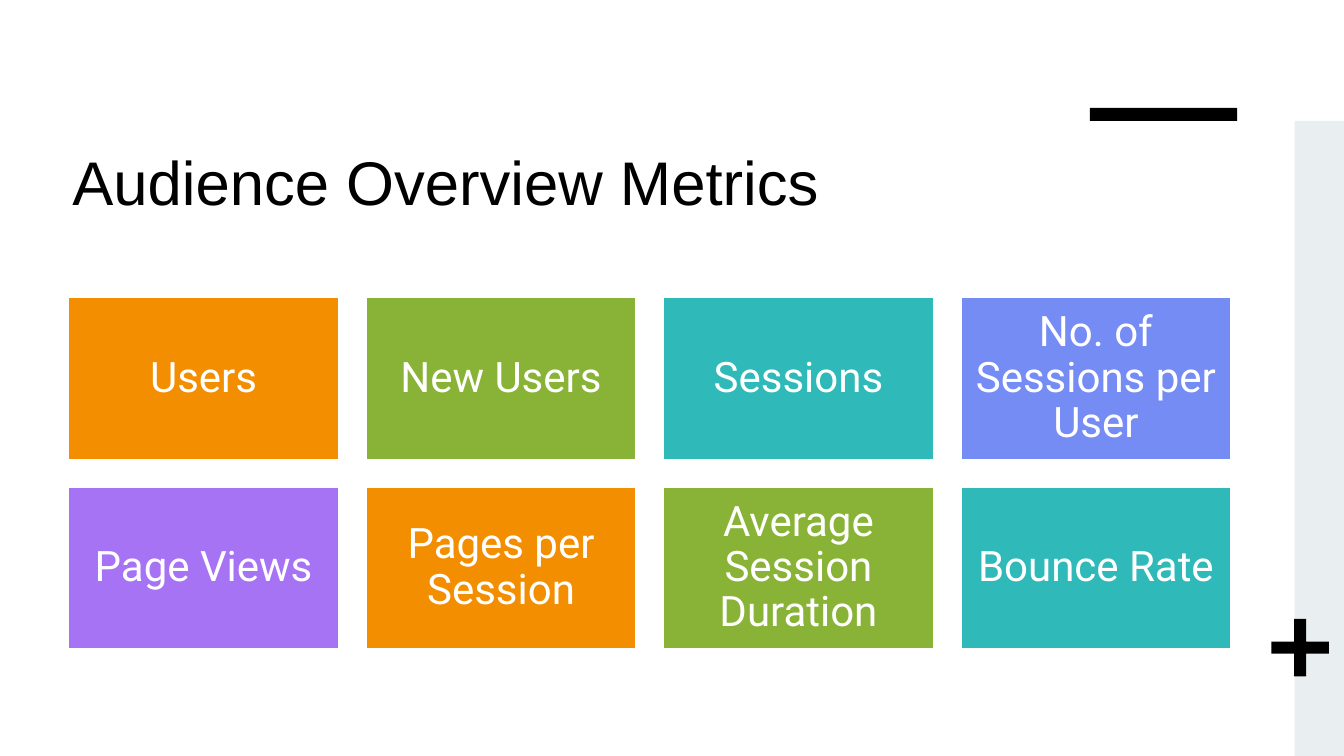
"""Build the Audience Overview Metrics slide."""
from dataclasses import dataclass

from pptx import Presentation
from pptx.dml.color import RGBColor
from pptx.enum.shapes import MSO_SHAPE as SHAPE
from pptx.enum.text import MSO_ANCHOR as ANCHOR, PP_ALIGN as ALIGN
from pptx.shapes.autoshape import Shape
from pptx.slide import Slide
from pptx.text.text import TextFrame
from pptx.util import Inches, Pt

WHITE, BLACK, PALE = "FFFFFF", "000000", "E9EFF1"
COLUMNS = 4
CARD_LEFT, CARD_TOP = 0.68, 2.95
CARD_W, CARD_H, GAP = 2.68, 1.61, 0.27


@dataclass
class Block:
    left: float
    top: float
    width: float
    height: float
    fill: str
    kind: SHAPE = SHAPE.RECTANGLE


@dataclass
class Metric:
    label: str
    fill: str


METRICS = [
    Metric("Users", "F38E00"),
    Metric("New Users", "89B336"),
    Metric("Sessions", "30B9B9"),
    Metric("No. of Sessions per User", "748CF4"),
    Metric("Page Views", "A673F4"),
    Metric("Pages per Session", "F38E00"),
    Metric("Average Session Duration", "89B336"),
    Metric("Bounce Rate", "30B9B9"),
]


def color(value: str) -> RGBColor:
    """Turn a hex string into a colour."""
    return RGBColor.from_string(value)


def set_text(tf: TextFrame, text: str, font: str, size: int, fill: str) -> None:
    """Fill a text frame with one wrapped, formatted line of text."""
    tf.text = text
    tf.word_wrap = True
    r = tf.paragraphs[0].runs[0]
    r.font.name = font
    r.font.size = Pt(size)
    r.font.color.rgb = color(fill)


def add_block(s: Slide, block: Block) -> Shape:
    """Draw a flat shape without outline or shadow."""
    box = (block.left, block.top, block.width, block.height)
    sp = s.shapes.add_shape(block.kind, *map(Inches, box))
    sp.shadow.inherit = False
    sp.fill.solid()
    sp.fill.fore_color.rgb = color(block.fill)
    sp.line.fill.background()
    return sp


def add_title(s: Slide, text: str) -> None:
    """Place the slide heading."""
    tf = s.shapes.add_textbox(*map(Inches, (0.62, 1.32, 9.04, 1.58))).text_frame
    set_text(tf, text, "Arial", 44, BLACK)
    tf.margin_top = Inches(0.11)


def add_card(s: Slide, index: int, metric: Metric) -> None:
    """Draw one metric card at its place in the grid."""
    row, col = divmod(index, COLUMNS)
    left = CARD_LEFT + col * (CARD_W + GAP)
    top = CARD_TOP + row * (CARD_H + GAP)
    sp = add_block(s, Block(left, top, CARD_W, CARD_H, metric.fill))
    sp.line.color.rgb = color(WHITE)
    sp.line.width = Pt(1)
    tf = sp.text_frame
    set_text(tf, metric.label, "Roboto", 30, WHITE)
    tf.vertical_anchor = ANCHOR.MIDDLE
    tf.margin_left = tf.margin_right = Inches(0.12)
    tf.margin_top = tf.margin_bottom = Inches(0.12)
    p = tf.paragraphs[0]
    p.alignment = ALIGN.CENTER
    p.line_spacing = 0.9


def main() -> None:
    """Assemble and save the slide."""
    prs = Presentation()
    prs.slide_width, prs.slide_height = Inches(13.33), Inches(7.5)
    s = prs.slides.add_slide(prs.slide_layouts[6])
    s.background.fill.solid()
    s.background.fill.fore_color.rgb = color(WHITE)
    add_title(s, "Audience Overview Metrics")
    add_block(s, Block(12.84, 1.2, 0.49, 6.3, PALE))
    add_block(s, Block(10.81, 1.07, 1.46, 0.13, BLACK))
    plus = add_block(s, Block(12.61, 6.14, 0.57, 0.57, BLACK, SHAPE.CROSS))
    plus.adjustments[0] = 0.395
    for index, metric in enumerate(METRICS):
        add_card(s, index, metric)
    prs.save("out.pptx")


if __name__ == "__main__":
    main()
